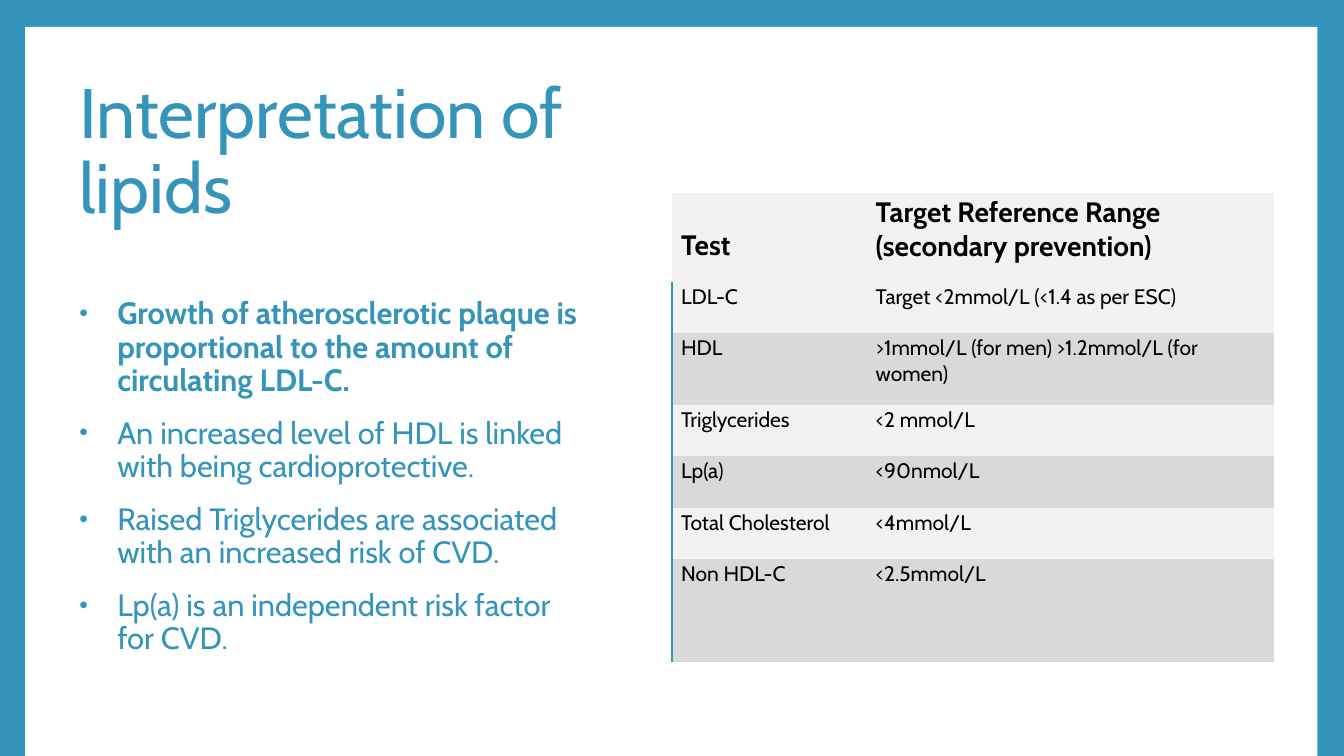
from dataclasses import dataclass

from pptx import Presentation
from pptx.dml.color import RGBColor
from pptx.enum.shapes import MSO_SHAPE
from pptx.enum.text import MSO_ANCHOR
from pptx.oxml import parse_xml
from pptx.oxml.ns import nsdecls, qn
from pptx.util import Pt


@dataclass(frozen=True)
class Theme:
    font: str = "Cabin"
    accent: str = "3494BA"
    paper: str = "FFFFFF"
    ink: str = "000000"
    light: str = "F2F2F2"
    dark: str = "D9D9D9"
    title: int = 50
    body: int = 22
    head: int = 20
    cell: int = 15


def paint(fill, color):
    fill.solid()
    fill.fore_color.rgb = RGBColor.from_string(color)


def write(p, text, *, font, size, color, bold=False, spacing=None, before=None):
    r = p.add_run()
    r.text = text
    r.font.name = font
    r.font.size = Pt(size)
    r.font.bold = bold
    r.font.color.rgb = RGBColor.from_string(color)
    if spacing:
        p.line_spacing = spacing
    if before is not None:
        p.space_before = Pt(before)


class Deck:
    def __init__(self, prs, theme):
        self.theme = theme
        self.s = prs.slides.add_slide(prs.slide_layouts[6])
        paint(self.s.background.fill, theme.accent)

    def panel(self, x, y, w, h):
        sp = self.s.shapes.add_shape(MSO_SHAPE.RECTANGLE, Pt(x), Pt(y), Pt(w), Pt(h))
        sp.shadow.inherit = False
        paint(sp.fill, self.theme.paper)
        sp.line.fill.background()

    def frame(self, x, y, w, h, anchor):
        tf = self.s.shapes.add_textbox(Pt(x), Pt(y), Pt(w), Pt(h)).text_frame
        tf.word_wrap = True
        tf.vertical_anchor = anchor
        return tf

    def title(self, text, x, y, w, h):
        t = self.theme
        tf = self.frame(x, y, w, h, MSO_ANCHOR.BOTTOM)
        write(tf.paragraphs[0], text, font=t.font, size=t.title, color=t.accent, spacing=0.9)

    def bullets(self, items, x, y, w, h):
        t = self.theme
        tf = self.frame(x, y, w, h, MSO_ANCHOR.TOP)
        for i, text in enumerate(items):
            p = tf.add_paragraph() if i else tf.paragraphs[0]
            write(p, text, font=t.font, size=t.body, color=t.accent, bold=i == 0,
                  spacing=0.9, before=14)
            pPr = p._p.get_or_add_pPr()
            pPr.set("marL", str(Pt(27)))
            pPr.set("indent", str(Pt(-27)))
            for xml in (
                f'<a:buClr {nsdecls("a")}><a:srgbClr val="{t.accent}"/></a:buClr>',
                f'<a:buSzPct {nsdecls("a")} val="80000"/>',
                f'<a:buFont {nsdecls("a")} typeface="Arial"/>',
                f'<a:buChar {nsdecls("a")} char="•"/>',
            ):
                pPr.append(parse_xml(xml))

    def table(self, rows, x, y, widths, heights):
        t = self.theme
        shape = self.s.shapes.add_table(len(rows), len(widths), Pt(x), Pt(y),
                                        Pt(sum(widths)), Pt(sum(heights)))
        table = shape.table
        table.first_row = table.horz_banding = False
        style = table._tbl.tblPr.find(qn("a:tableStyleId"))
        style.text = "{2D5ABB26-0587-4C30-8999-92F81FD0307C}"
        for column, width in zip(table.columns, widths):
            column.width = Pt(width)
        for i, (row, height) in enumerate(zip(rows, heights)):
            table.rows[i].height = Pt(height)
            band = t.dark if i and (i % 2 == 0 or not any(row)) else t.light
            for j, text in enumerate(row):
                self.cell(table.cell(i, j), text, band, head=i == 0, edge=i > 0 and j == 0)

    def cell(self, cell, text, band, head, edge):
        t = self.theme
        cell.margin_left, cell.margin_top = Pt(6.5), Pt(1.5)
        cell.margin_right, cell.margin_bottom = Pt(8.6), Pt(13.7)
        cell.vertical_anchor = MSO_ANCHOR.BOTTOM if head else MSO_ANCHOR.TOP
        paint(cell.fill, band)
        if text:
            write(cell.text_frame.paragraphs[0], text, font=t.font, color=t.ink,
                  size=t.head if head else t.cell, bold=head)
        if edge:
            cell._tc.get_or_add_tcPr().insert(0, parse_xml(
                f'<a:lnL {nsdecls("a")} w="{Pt(1)}"><a:solidFill>'
                f'<a:srgbClr val="{t.accent}"/></a:solidFill></a:lnL>'))


def main():
    prs = Presentation()
    prs.slide_width, prs.slide_height = Pt(960), Pt(540)
    deck = Deck(prs, Theme())
    deck.panel(18, 19.3, 923, 521.5 - 0.2)
    deck.title("Interpretation of lipids", 49.7, 50.4, 379.4, 116.6)
    deck.bullets([
        "Growth of atherosclerotic plaque is proportional to the amount of circulating LDL-C.",
        "An increased level of HDL is linked with being cardioprotective.",
        "Raised Triglycerides are associated with an increased risk of CVD.",
        "Lp(a) is an independent risk factor for CVD.",
    ], 49.7, 209.5, 379.4, 279.4)
    deck.table([
        ("Test", "Target Reference Range (secondary prevention)"),
        ("LDL-C", "Target <2mmol/L (<1.4 as per ESC)"),
        ("HDL", ">1mmol/L (for men) >1.2mmol/L (for women)"),
        ("Triglycerides", "<2 mmol/L"),
        ("Lp(a)", "<90nmol/L"),
        ("Total Cholesterol", "<4mmol/L"),
        ("Non HDL-C", "<2.5mmol/L"),
        ("", ""),
    ], 480, 138, (139, 291), [43.2] + [36.8] * 7)
    prs.save("out.pptx")


if __name__ == "__main__":
    main()
